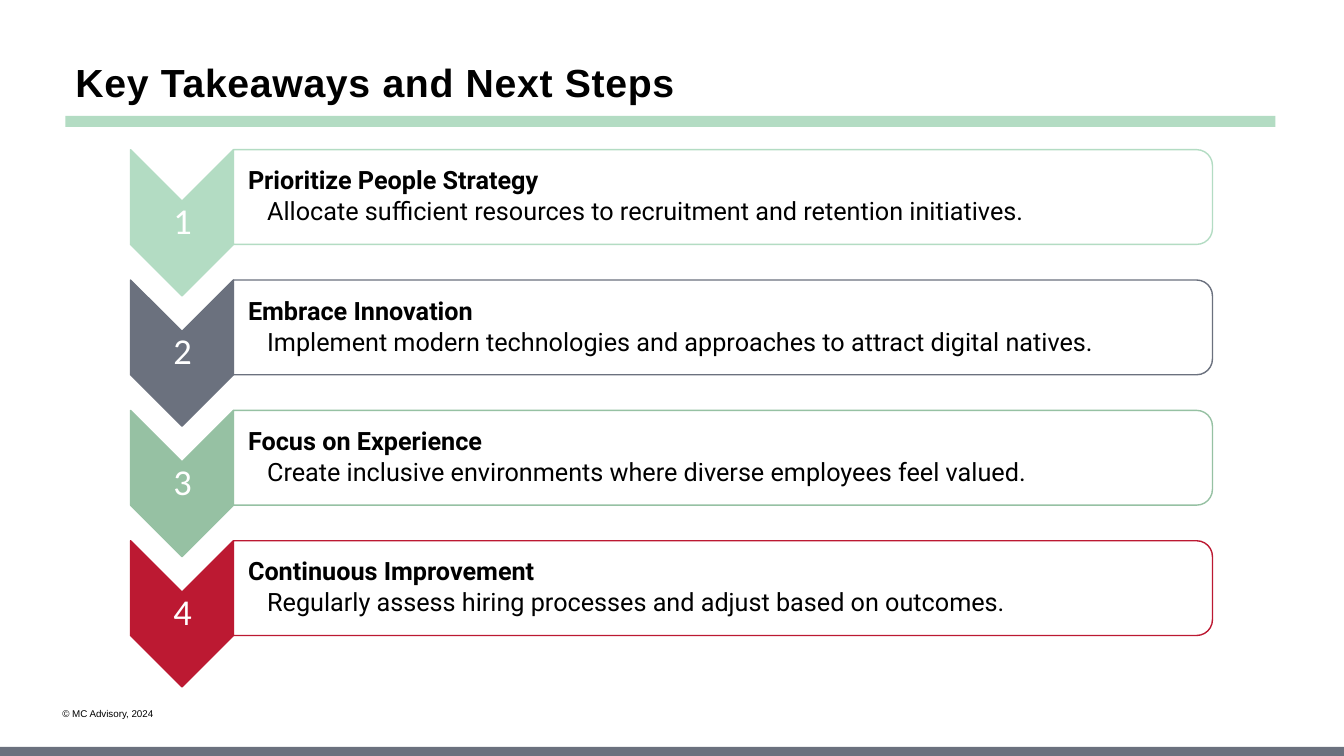
from lxml import etree
from pptx import Presentation
from pptx.dml.color import RGBColor
from pptx.enum.shapes import MSO_SHAPE
from pptx.enum.text import MSO_ANCHOR, PP_ALIGN
from pptx.oxml.ns import qn
from pptx.util import Inches, Pt

RECTANGLE = MSO_SHAPE.RECTANGLE
CHEVRON = MSO_SHAPE.CHEVRON
ROUNDED_END = MSO_SHAPE.ROUND_2_SAME_RECTANGLE
TOP, MIDDLE = MSO_ANCHOR.TOP, MSO_ANCHOR.MIDDLE
CENTER = PP_ALIGN.CENTER

MINT, SLATE, SAGE, RED = "B3DCC3", "6B717E", "96C1A3", "BC1932"
BLACK, WHITE = "000000", "FFFFFF"

TAKEAWAYS = [
    (MINT, "Prioritize People Strategy",
     "Allocate sufficient resources to recruitment and retention initiatives."),
    (SLATE, "Embrace Innovation",
     "Implement modern technologies and approaches to attract digital natives."),
    (SAGE, "Focus on Experience",
     "Create inclusive environments where diverse employees feel valued."),
    (RED, "Continuous Improvement",
     "Regularly assess hiring processes and adjust based on outcomes."),
]
FIRST_TOP, LAST_TOP = 1.7, 5.58
ROW_PITCH = (LAST_TOP - FIRST_TOP) / (len(TAKEAWAYS) - 1)
HANGING = 0.19


def color(hex_value):
    return RGBColor.from_string(hex_value)


def add_shape(shapes, kind, box, fill, line=None, rotation=0):
    shape = shapes.add_shape(kind, *map(Inches, box))
    shape.shadow.inherit = False
    shape.rotation = rotation
    shape.fill.solid()
    shape.fill.fore_color.rgb = color(fill)
    if line:
        shape.line.color.rgb = color(line)
        shape.line.width = Pt(1)
    else:
        shape.line.fill.background()
    return shape


def set_opacity(shape, percent):
    fill_color = shape.fill._xPr.find(qn("a:solidFill"))[0]
    etree.SubElement(fill_color, qn("a:alpha")).set("val", str(percent * 1000))


def add_text_frame(shapes, box, anchor=TOP, insets=(0.1, 0.05, 0.1, 0.05), wrap=True):
    """Insets are left, top, right and bottom."""
    frame = shapes.add_textbox(*map(Inches, box)).text_frame
    frame.word_wrap = wrap
    frame.vertical_anchor = anchor
    (frame.margin_left, frame.margin_top,
     frame.margin_right, frame.margin_bottom) = map(Inches, insets)
    return frame


def add_run(paragraph, text, font, size, text_color=BLACK, bold=False):
    run = paragraph.add_run()
    run.text = text
    run.font.name = font
    run.font.size = Pt(size)
    run.font.bold = bold
    run.font.color.rgb = color(text_color)
    return run


def format_outline_level(paragraph, level):
    paragraph.level = level
    paragraph.line_spacing = 0.9
    paragraph.space_after = Pt(2.7)
    properties = paragraph._p.get_or_add_pPr()
    properties.set("marL", str(Inches(HANGING * level)))
    properties.set("indent", str(-Inches(HANGING)))


def add_title(shapes, text):
    frame = add_text_frame(shapes, (0.65, 0.56, 12, 0.57), MIDDLE)
    paragraph = frame.paragraphs[0]
    paragraph.line_spacing = 0.9
    run = add_run(paragraph, text, "Arial", 28, bold=True)
    run.font._element.set("spc", "50")


def add_footer(shapes, text):
    frame = add_text_frame(shapes, (0.52, 6.97, 1.13, 0.22), wrap=False)
    add_run(frame.paragraphs[0], text, "Arial", 7)


def add_takeaway(shapes, number, top, accent, heading, detail):
    add_shape(shapes, CHEVRON, (1.08, top, 1.45, 1.02), accent, accent, 90)
    frame = add_text_frame(shapes, (1.3, top + 0.29, 1.02, 0.44), MIDDLE, (0.02,) * 4)
    paragraph = frame.paragraphs[0]
    paragraph.alignment = CENTER
    paragraph.line_spacing = 0.9
    add_run(paragraph, str(number), "Calibri", 26, WHITE)

    panel = add_shape(shapes, ROUNDED_END, (6.7, top - 4.6, 0.94, 9.71),
                      WHITE, accent, 90)
    set_opacity(panel, 90)
    frame = add_text_frame(shapes, (2.32, top - 0.17, 9.67, 0.85), MIDDLE,
                           (0.14, 0.01, 0.01, 0.01))
    heading_paragraph, detail_paragraph = frame.paragraphs[0], frame.add_paragraph()
    format_outline_level(heading_paragraph, 1)
    add_run(heading_paragraph, heading, "Roboto", 18, bold=True)
    format_outline_level(detail_paragraph, 2)
    add_run(detail_paragraph, detail, "Roboto", 18)


def main():
    presentation = Presentation()
    presentation.slide_width = Inches(13.33)
    presentation.slide_height = Inches(7.5)
    slide = presentation.slides.add_slide(presentation.slide_layouts[6])

    add_shape(slide.shapes, RECTANGLE, (-0.03, 7.41, 13.39, 0.1), SLATE)
    add_footer(slide.shapes, "© MC Advisory, 2024")
    add_shape(slide.shapes, RECTANGLE, (0.65, 1.15, 12, 0.11), MINT)
    add_title(slide.shapes, "Key Takeaways and Next Steps")

    takeaway_list = slide.shapes.add_group_shape()
    for index, takeaway in enumerate(TAKEAWAYS):
        add_takeaway(takeaway_list.shapes, index + 1,
                     FIRST_TOP + index * ROW_PITCH, *takeaway)

    presentation.save("out.pptx")


if __name__ == "__main__":
    main()
